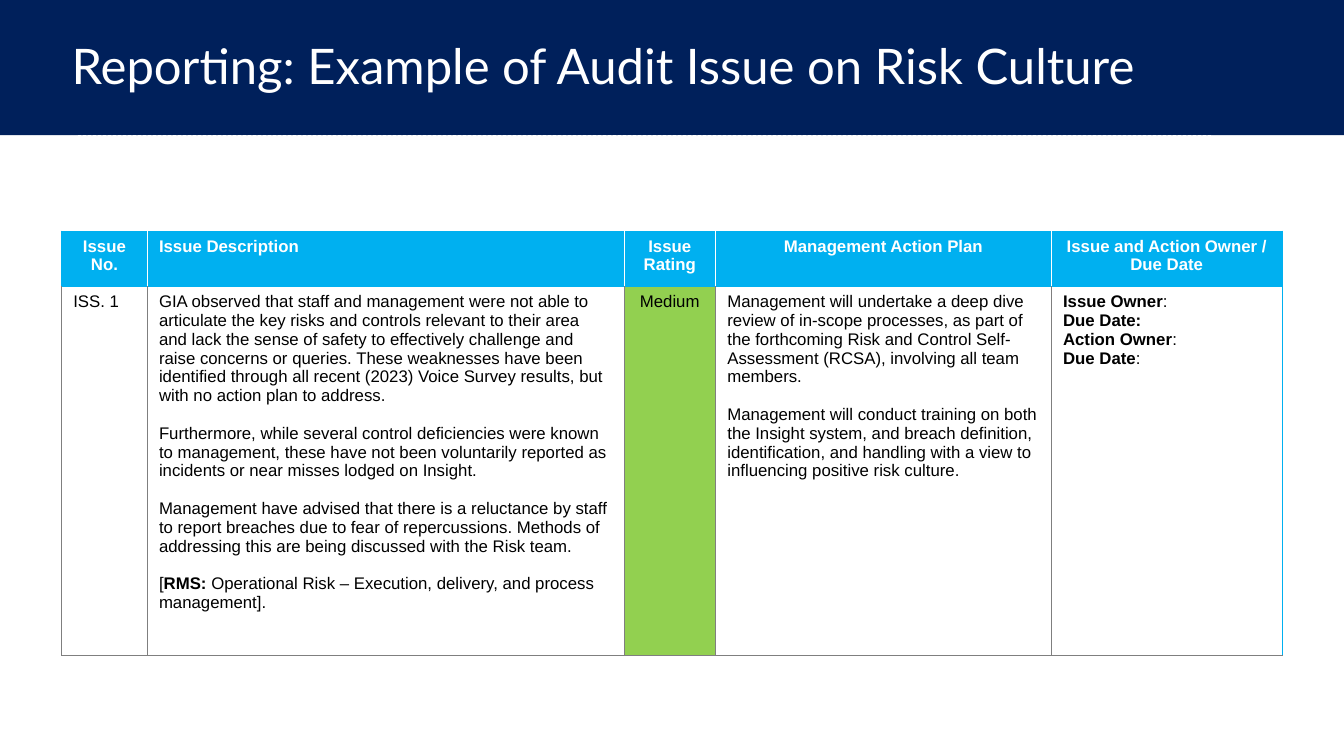
from lxml.etree import SubElement as Sub
from pptx import Presentation
from pptx.dml.color import RGBColor as Rgb
from pptx.enum.dml import MSO_LINE as Dash
from pptx.enum.shapes import MSO_CONNECTOR as Conn, MSO_SHAPE as Shape
from pptx.enum.text import MSO_ANCHOR as Anchor, PP_ALIGN as Align
from pptx.oxml.ns import qn
from pptx.util import Pt

HUES = {"navy": "00205B", "white": "FFFFFF", "black": "000000",
        "blue": "00B0F0", "green": "92D050", "gray": "7F7F7F"}
WIDTHS = [61.2, 340.5, 65.5, 239.8, 164.9]
HEIGHTS = [39.6, 263.5]
GAP = 13.5  # one line between body paragraphs

# Each cell is a list of paragraphs, each paragraph a list of (text, bold) runs
HEADS = ["Issue No.", "Issue Description", "Issue Rating",
         "Management Action Plan", "Issue and Action Owner / Due Date"]
ISSUE = [
    [[("ISS. 1", False)]],
    [[("GIA observed that staff and management were not able to articulate the "
       "key risks and controls relevant to their area and lack the sense of "
       "safety to effectively challenge and raise concerns or queries. These "
       "weaknesses have been identified through all recent (2023) Voice Survey "
       "results, but with no action plan to address.", False)],
     [("Furthermore, while several control deficiencies were known to "
       "management, these have not been voluntarily reported as incidents or "
       "near misses lodged on Insight.", False)],
     [("Management have advised that there is a reluctance by staff to report "
       "breaches due to fear of repercussions. Methods of addressing this are "
       "being discussed with the Risk team.", False)],
     [("[", False), ("RMS:", True),
      (" Operational Risk – Execution, delivery, and process management].", False)]],
    [[("Medium", False)]],
    [[("Management will undertake a deep dive review of in-scope processes, as "
       "part of the forthcoming Risk and Control Self-Assessment (RCSA), "
       "involving all team members.", False)],
     [("Management will conduct training on both the Insight system, and breach "
       "definition, identification, and handling with a view to influencing "
       "positive risk culture.", False)]],
    [[("Issue Owner", True), (":", False)],
     [("Due Date:", True)],
     [("Action Owner", True), (":", False)],
     [("Due Date", True), (":", False)]],
]


def tint(name):
    return Rgb.from_string(HUES[name])


def add_run(para, text, size, face, hue, bold=False):
    run = para.add_run()
    run.text = text
    font = run.font
    font.size, font.name, font.bold = Pt(size), face, bold
    font.color.rgb = tint(hue)


def add_band(slide):
    band = slide.shapes.add_shape(Shape.RECTANGLE, 0, 0, Pt(960), Pt(96.5))
    band.shadow.inherit = False
    band.fill.solid()
    band.fill.fore_color.rgb = tint("navy")
    band.line.fill.background()


def add_rule(slide):
    rule = slide.shapes.add_connector(
        Conn.STRAIGHT, Pt(55.5), Pt(96.5), Pt(866), Pt(96.5))
    rule.line.color.rgb = tint("white")
    rule.line.width = Pt(0.5)
    rule.line.dash_style = Dash.DASH
    Sub(rule.element.spPr, qn("a:effectLst"))


def add_title(slide, text):
    box = slide.shapes.add_textbox(Pt(44), Pt(5.8), Pt(834.5), Pt(86.4))
    frame = box.text_frame
    frame.word_wrap = True
    frame.vertical_anchor = Anchor.MIDDLE
    para = frame.paragraphs[0]
    para.line_spacing = 0.9
    add_run(para, text, 35, "Lato", "white")


def add_edges(cell, hues):
    """Draw the left, right, top and bottom borders, in that order."""
    props = cell._tc.get_or_add_tcPr()
    for side, hue in zip("LRTB", hues):
        edge = Sub(props, qn(f"a:ln{side}"), w=str(Pt(0.75)))
        Sub(Sub(edge, qn("a:solidFill")), qn("a:srgbClr"), val=HUES[hue])


def fill_cell(cell, paras, hue, align, back=None, gap=0):
    cell.margin_left = cell.margin_right = Pt(8.4)
    cell.margin_top = cell.margin_bottom = Pt(4.2)
    if back:
        cell.fill.solid()
        cell.fill.fore_color.rgb = tint(back)
    else:
        cell.fill.background()
    frame = cell.text_frame
    for i, runs in enumerate(paras):
        para = frame.add_paragraph() if i else frame.paragraphs[0]
        para.alignment = align
        if i and gap:
            para.space_before = Pt(gap)
        for text, bold in runs:
            add_run(para, text, 12, "Arial", hue, bold)


def add_grid(slide):
    grid = slide.shapes.add_table(
        2, len(WIDTHS), Pt(44), Pt(165), Pt(sum(WIDTHS)), Pt(sum(HEIGHTS))).table
    grid.first_row = grid.horz_banding = False
    for col, width in zip(grid.columns, WIDTHS):
        col.width = Pt(width)
    for row, height in zip(grid.rows, HEIGHTS):
        row.height = Pt(height)

    last = len(WIDTHS) - 1
    for i, (head, paras) in enumerate(zip(HEADS, ISSUE)):
        # Header row
        cell = grid.cell(0, i)
        add_edges(cell, ["white" if i else "blue",
                         "white" if i < last else "blue", "blue", "blue"])
        align = Align.LEFT if i == 1 else Align.CENTER
        fill_cell(cell, [[(head, True)]], "white", align, "blue")
        # Issue row
        cell = grid.cell(1, i)
        add_edges(cell, ["gray", "gray" if i < last else "blue", "blue", "gray"])
        rating = i == 2
        fill_cell(cell, paras, "black", Align.CENTER if rating else Align.LEFT,
                  "green" if rating else None, GAP if i < last else 0)


def main():
    deck = Presentation()
    deck.slide_width, deck.slide_height = Pt(960), Pt(540)
    slide = deck.slides.add_slide(deck.slide_layouts[6])
    add_band(slide)
    add_rule(slide)
    add_title(slide, "Reporting: Example of Audit Issue on Risk Culture")
    add_grid(slide)
    deck.save("out.pptx")


if __name__ == "__main__":
    main()
